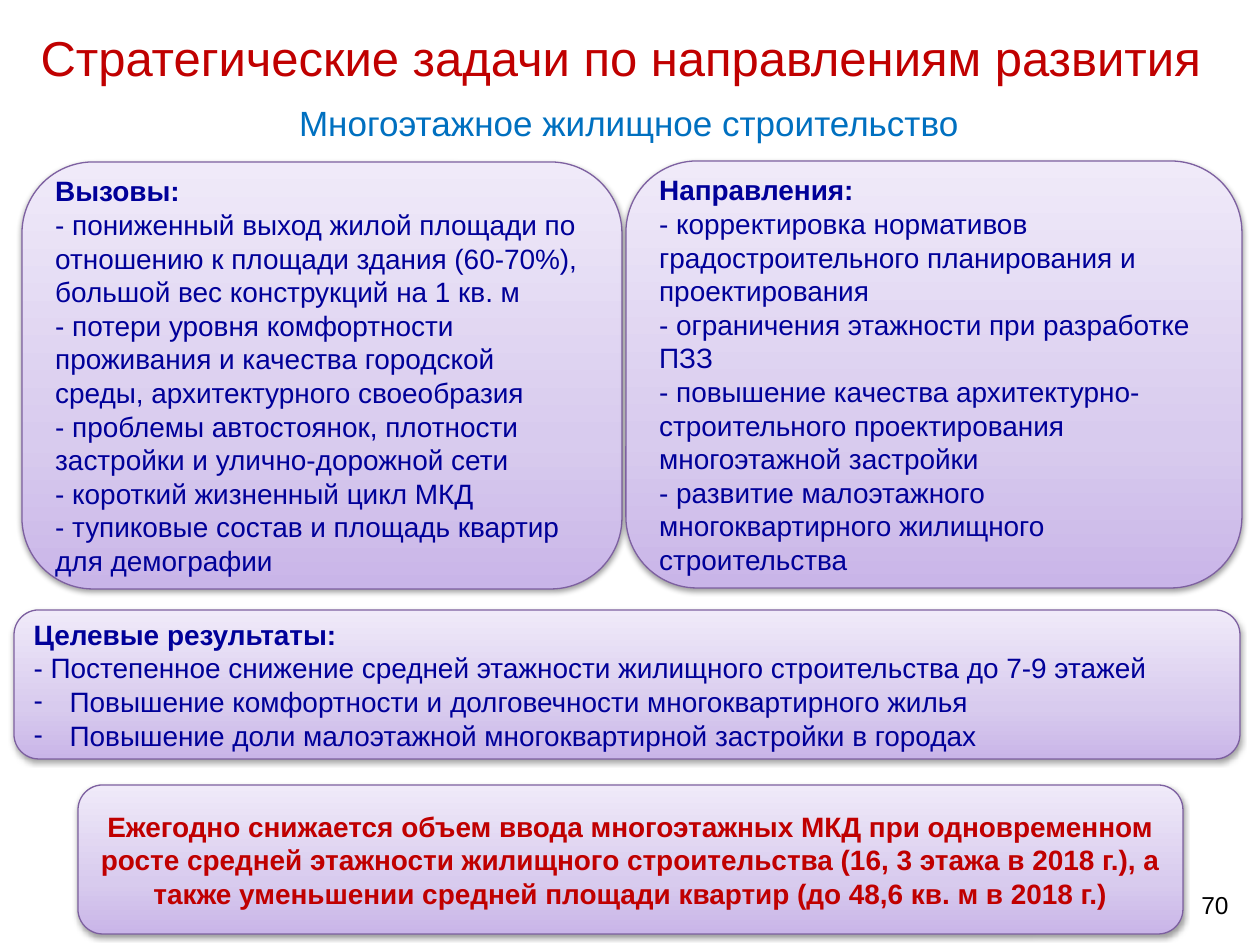
from lxml import etree
from pptx import Presentation
from pptx import util as u
from pptx.dml.color import RGBColor
from pptx.enum import shapes, text
from pptx.oxml import parse_xml
from pptx.oxml.ns import nsdecls, qn

SCALE = 914400 / 126  # EMU per px
COLORS = {
    "red": "C00000", "blue": "0070C0", "navy": "000099", "black": "000000",
    "outline": "7D60A0", "deep": "C9B5E8", "middle": "D8CBEE", "pale": "F0EAF9",
}
LEFT, CENTER, RIGHT = text.PP_ALIGN.LEFT, text.PP_ALIGN.CENTER, text.PP_ALIGN.RIGHT
BULLET_INDENT = 36

GRADIENT = f"""<a:gradFill {nsdecls('a')} rotWithShape="1"><a:gsLst>
<a:gs pos="0"><a:srgbClr val="{COLORS['deep']}"/></a:gs>
<a:gs pos="35000"><a:srgbClr val="{COLORS['middle']}"/></a:gs>
<a:gs pos="100000"><a:srgbClr val="{COLORS['pale']}"/></a:gs>
</a:gsLst><a:lin ang="16200000" scaled="1"/></a:gradFill>"""
SHADOW = f"""<a:outerShdw {nsdecls('a')} blurRad="40000" dist="20000" dir="5400000"
rotWithShape="0"><a:srgbClr val="{COLORS['black']}"><a:alpha val="38000"/></a:srgbClr></a:outerShdw>"""


def emu(*lengths):
    return [u.Emu(round(length * SCALE)) for length in lengths]


def write(box, lines, align, size, color, heading=False, bullets_from=None):
    frame = box.text_frame
    frame.word_wrap = True
    frame.vertical_anchor = text.MSO_ANCHOR.MIDDLE
    for number, line in enumerate(lines):
        para = frame.paragraphs[0] if number == 0 else frame.add_paragraph()
        para.alignment = align
        if bullets_from is not None and number >= bullets_from:
            indent = emu(BULLET_INDENT)[0]
            settings = para._p.get_or_add_pPr()
            settings.set("marL", str(indent))
            settings.set("indent", str(-indent))
            etree.SubElement(settings, qn("a:buFont")).set("typeface", "Arial")
            etree.SubElement(settings, qn("a:buChar")).set("char", "-")
        span = para.add_run()
        span.text = line
        style = {"name": "Arial", "size": u.Pt(size), "bold": heading and number == 0}
        for name, value in style.items():
            setattr(span.font, name, value)
        span.font.color.rgb = RGBColor.from_string(COLORS[color])


deck = Presentation()
deck.slide_width, deck.slide_height = emu(1260, 945)
page = deck.slides.add_slide(deck.slide_layouts[6])

# Title, subtitle and page number
labels = [
    ((14, 4, 1213, 105), "Стратегические задачи по направлениям развития", CENTER, 28, "red"),
    ((13, 87, 1232, 71), "Многоэтажное жилищное строительство", CENTER, 20, "blue"),
    ((948, 880, 293, 50), "70", RIGHT, 14, "black"),
]
for place, label, align, size, color in labels:
    box = page.shapes.add_textbox(*emu(*place))
    write(box, [label], align, size, color)

# Rounded panels: place, lines, alignment, colour, first bulleted line
panels = [
    ((14, 610, 1226, 149), [
        "Целевые результаты:",
        "- Постепенное снижение средней этажности жилищного строительства до 7-9 этажей",
        "Повышение комфортности и долговечности многоквартирного жилья",
        "Повышение доли малоэтажной многоквартирной застройки в городах",
    ], LEFT, "navy", 2),
    ((22, 162, 600, 427), [
        "Вызовы:",
        "- пониженный выход жилой площади по отношению к площади здания (60-70%), "
        "большой вес конструкций на 1 кв. м",
        "- потери уровня комфортности проживания и качества городской среды, "
        "архитектурного своеобразия",
        "- проблемы автостоянок, плотности застройки и улично-дорожной сети",
        "- короткий жизненный цикл МКД",
        "- тупиковые состав и площадь квартир для демографии",
    ], LEFT, "navy", None),
    ((626, 161, 616, 427), [
        "Направления:",
        "- корректировка нормативов градостроительного планирования и проектирования",
        "- ограничения этажности при разработке ПЗЗ",
        "- повышение качества архитектурно-строительного проектирования многоэтажной застройки",
        "- развитие малоэтажного многоквартирного жилищного строительства",
    ], LEFT, "navy", None),
    ((78, 785, 1105, 149), [
        "Ежегодно снижается объем ввода многоэтажных МКД при одновременном росте средней "
        "этажности жилищного строительства (16, 3 этажа в 2018 г.), а также уменьшении "
        "средней площади квартир (до 48,6 кв. м в 2018 г.)",
    ], CENTER, "red", None),
]
for place, lines, align, color, bullets_from in panels:
    panel = page.shapes.add_shape(shapes.MSO_SHAPE.ROUNDED_RECTANGLE, *emu(*place))
    panel.line.color.rgb = RGBColor.from_string(COLORS["outline"])
    panel.line.width = u.Pt(0.75)
    panel.shadow.inherit = False
    properties = panel._element.spPr
    properties.find(qn("a:prstGeom")).addnext(parse_xml(GRADIENT))
    properties.find(qn("a:effectLst")).append(parse_xml(SHADOW))
    write(panel, lines, align, 16, color, heading=True, bullets_from=bullets_from)

deck.save("out.pptx")
